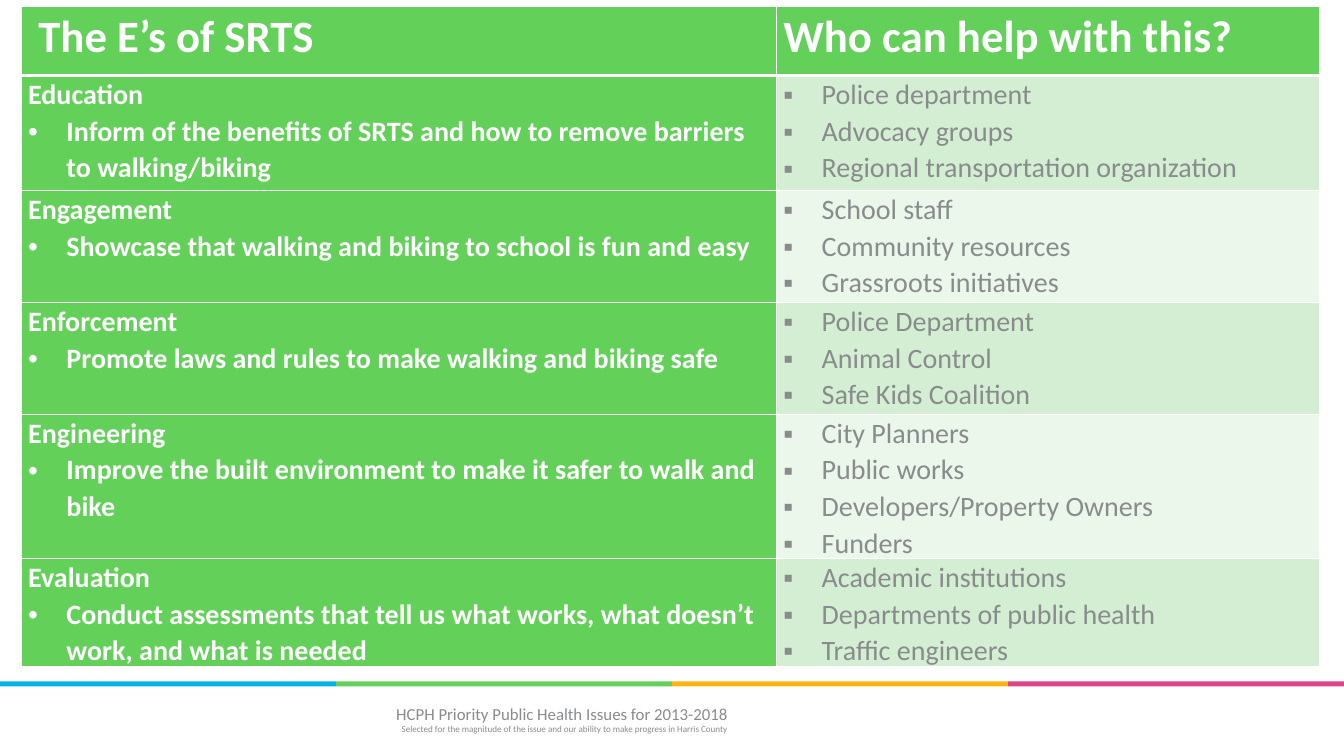
from lxml.etree import SubElement
from pptx import Presentation
from pptx.dml.color import RGBColor
from pptx.enum.shapes import MSO_SHAPE
from pptx.enum.text import MSO_AUTO_SIZE, PP_ALIGN
from pptx.oxml import parse_xml
from pptx.oxml.ns import nsdecls, qn
from pptx.util import Inches, Pt

WIDTH, HEIGHT = 13.33, 7.5
FONT = "Calibri"
WHITE, GREEN, GREY = "FFFFFF", "63D05A", "898B8D"
BANDS = ["D3EED2", "EAF7EA"]
STRIPES = ["00B4E4", GREEN, "FFB511", "DC4588"]
COLUMN_WIDTHS = [7.49, 5.39]
ROW_HEIGHTS = [0.69, 1.14, 1.11, 1.11, 1.43, 1.06]
BULLET_INDENT = 0.38
HEADINGS = ["The E’s of SRTS", "Who can help with this?"]
TOPICS = [
    ("Education",
     "Inform of the benefits of SRTS and how to remove barriers to walking/biking",
     ["Police department", "Advocacy groups", "Regional transportation organization"]),
    ("Engagement",
     "Showcase that walking and biking to school is fun and easy",
     ["School staff", "Community resources", "Grassroots initiatives"]),
    ("Enforcement",
     "Promote laws and rules to make walking and biking safe",
     ["Police Department", "Animal Control", "Safe Kids Coalition"]),
    ("Engineering",
     "Improve the built environment to make it safer to walk and bike",
     ["City Planners", "Public works", "Developers/Property Owners", "Funders"]),
    ("Evaluation",
     "Conduct assessments that tell us what works, what doesn’t work, and what is needed",
     ["Academic institutions", "Departments of public health", "Traffic engineers"]),
]


def color(hex_string):
    return RGBColor.from_string(hex_string)


def write(frame, text, size=20, ink=WHITE, bold=False, bullet=None,
          indent=0, align=PP_ALIGN.LEFT, spacing=1.07):
    """Fill the empty first paragraph, or add another one."""
    first = frame.paragraphs[0]
    paragraph = frame.add_paragraph() if first.runs else first
    paragraph.alignment = align
    paragraph.line_spacing = spacing
    properties = paragraph._p.get_or_add_pPr()
    properties.set("marL", str(Inches(indent)))
    if bullet:
        properties.set("indent", str(-Inches(indent)))
        SubElement(properties, qn("a:buFont"), typeface="Arial")
        SubElement(properties, qn("a:buChar"), char=bullet)
    run = paragraph.add_run()
    run.text = text
    run.font.name, run.font.size, run.font.bold = FONT, Pt(size), bold
    run.font.color.rgb = color(ink)


def style_cell(cell, fill, top=1, bottom=1):
    cell.margin_left = cell.margin_right = Inches(0.07)
    cell.margin_top = cell.margin_bottom = 0
    cell.fill.solid()
    cell.fill.fore_color.rgb = color(fill)
    # Borders come before the fill, in schema order
    borders = [("L", 1), ("R", 1), ("T", top), ("B", bottom)]
    for position, (side, points) in enumerate(borders):
        cell._tc.get_or_add_tcPr().insert(position, parse_xml(
            f'<a:ln{side} {nsdecls("a")} w="{Pt(points)}"><a:solidFill>'
            f'<a:srgbClr val="{WHITE}"/></a:solidFill></a:ln{side}>'))


def add_stripes(slide):
    stripe_width = WIDTH / len(STRIPES)
    for index, fill in enumerate(STRIPES):
        stripe = slide.shapes.add_shape(
            MSO_SHAPE.RECTANGLE, Inches(index * stripe_width), Inches(6.76),
            Inches(stripe_width), Inches(0.05))
        stripe.shadow.inherit = False
        stripe.fill.solid()
        stripe.fill.fore_color.rgb = color(fill)
        stripe.line.fill.background()


def add_footer(slide):
    footer = slide.shapes.add_textbox(
        Inches(3.79), Inches(6.93), Inches(3.53), Inches(0.41)).text_frame
    footer.word_wrap = False
    footer.auto_size = MSO_AUTO_SIZE.SHAPE_TO_FIT_TEXT
    for text, size in [
        ("HCPH Priority Public Health Issues for 2013-2018", 12),
        ("Selected for the magnitude of the issue and our ability to make "
         "progress in Harris County", 6.5),
    ]:
        write(footer, text, size=size, ink=GREY, align=PP_ALIGN.RIGHT, spacing=1.0)


def add_topics(slide):
    table = slide.shapes.add_table(
        len(ROW_HEIGHTS), len(COLUMN_WIDTHS), Inches(0.21), Inches(0.06),
        Inches(sum(COLUMN_WIDTHS)), Inches(sum(ROW_HEIGHTS))).table
    table.first_row = table.horz_banding = False
    for column, width in zip(table.columns, COLUMN_WIDTHS):
        column.width = Inches(width)
    for row, height in zip(table.rows, ROW_HEIGHTS):
        row.height = Inches(height)

    # Header row
    for column, (heading, indent) in enumerate(zip(HEADINGS, [0.1, 0])):
        cell = table.cell(0, column)
        style_cell(cell, GREEN, bottom=3)
        write(cell.text_frame, heading, size=32, bold=True, indent=indent)

    # One row per topic: its aim, then who can help
    for row, (topic, aim, helpers) in enumerate(TOPICS, start=1):
        top = 3 if row == 1 else 1
        aim_cell, helper_cell = table.cell(row, 0), table.cell(row, 1)
        style_cell(aim_cell, GREEN, top=top)
        write(aim_cell.text_frame, topic, bold=True)
        write(aim_cell.text_frame, aim, bold=True, bullet="•", indent=BULLET_INDENT)
        style_cell(helper_cell, BANDS[(row - 1) % len(BANDS)], top=top)
        for helper in helpers:
            write(helper_cell.text_frame, helper, ink=GREY, bullet="▪",
                  indent=BULLET_INDENT)


def main():
    deck = Presentation()
    deck.slide_width, deck.slide_height = Inches(WIDTH), Inches(HEIGHT)
    slide = deck.slides.add_slide(deck.slide_layouts[6])
    add_stripes(slide)
    add_footer(slide)
    add_topics(slide)
    deck.save("out.pptx")


if __name__ == "__main__":
    main()
